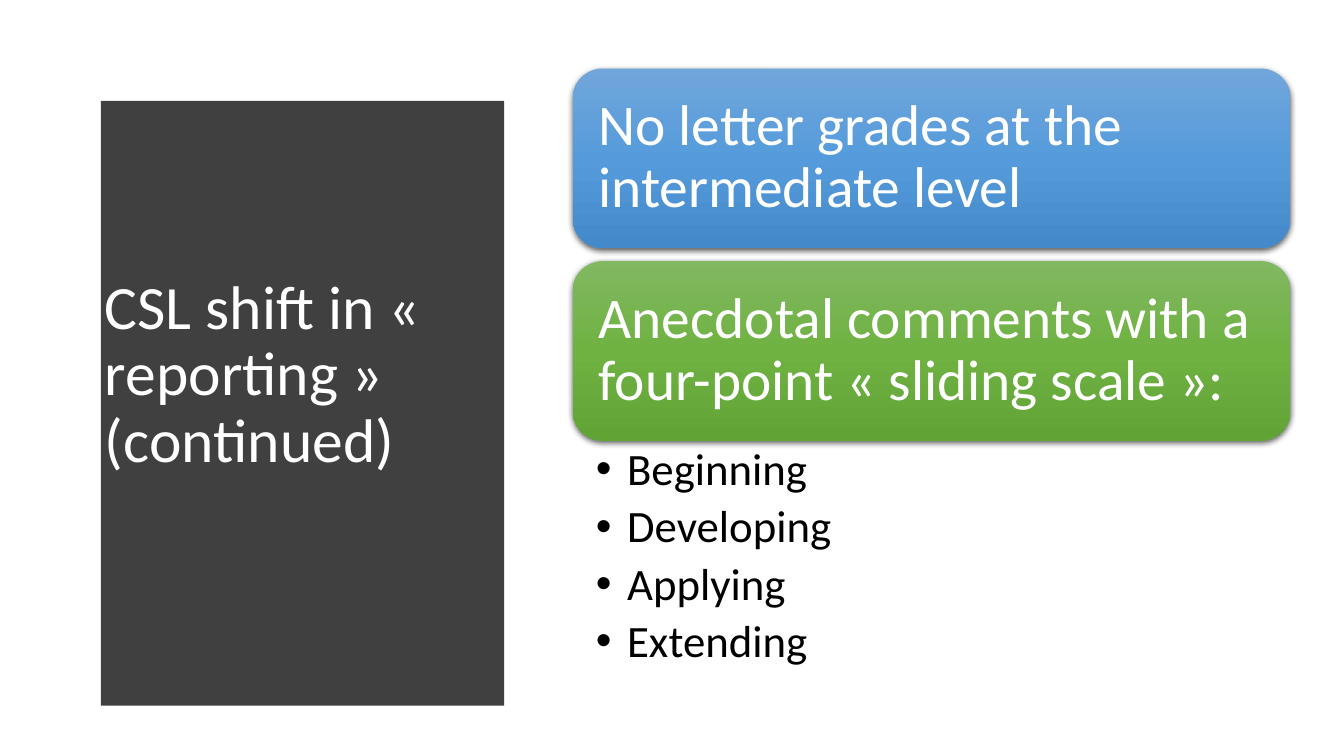
import pptx
import pptx.util
import pptx.dml.color
import pptx.enum.shapes
import pptx.enum.text
import pptx.oxml
import pptx.oxml.ns

Inches = pptx.util.Inches
Pt = pptx.util.Pt
FONT = "Calibri"
COLORS = {
    "panel": "404040",
    "light": "FFFFFF",
    "dark": "000000",
    "blue": ("71A6DB", "559BDB", "448ACA"),
    "green": ("81B861", "6FB242", "62A336"),
}
CARDS = [
    ("No letter grades at the intermediate level", "blue"),
    ("Anecdotal comments with a four-point «\u00a0sliding scale\u00a0»:".replace("\u00a0", " "), "green"),
]
LEVELS = ["Beginning", "Developing", "Applying", "Extending"]


def rgb(name):
    return pptx.dml.color.RGBColor.from_string(COLORS[name])


def xml(body):
    tag, rest = body.split(">", 1)
    return pptx.oxml.parse_xml(f"{tag} {pptx.oxml.ns.nsdecls('a')}>{rest}")


def set_frame(tf, anchor, left, top, right, bottom):
    tf.word_wrap = True
    tf.auto_size = pptx.enum.text.MSO_AUTO_SIZE.NONE
    tf.vertical_anchor = anchor
    tf.margin_left, tf.margin_top = Inches(left), Inches(top)
    tf.margin_right, tf.margin_bottom = Inches(right), Inches(bottom)


def write(p, text, size, color):
    p.alignment = pptx.enum.text.PP_ALIGN.LEFT
    p.line_spacing = 0.9
    r = p.add_run()
    r.text = text
    r.font.name = FONT
    r.font.size = Pt(size)
    r.font.color.rgb = rgb(color)


def add_title_panel(s, left, top, width, height):
    bulge, steps = 0.24, 40
    edge = left + width - bulge
    curve = []
    for i in range(steps + 1):
        t = 2 * i / steps - 1
        curve.append((edge + bulge * (1 - t * t), top + height * i / steps))
    fb = s.shapes.build_freeform(left, top, scale=Inches(1))
    fb.add_line_segments(curve + [(left, top + height)], close=True)
    sp = fb.convert_to_shape()
    sp.shadow.inherit = False
    sp.fill.solid()
    sp.fill.fore_color.rgb = rgb("panel")
    sp.line.fill.background()

    title = s.shapes.title
    title.left, title.top = Inches(left + 0.41), Inches(top + 0.59)
    title.width, title.height = Inches(width - 1.05), Inches(height - 1.2)
    s.shapes._spTree.append(title._element)
    set_frame(title.text_frame, pptx.enum.text.MSO_ANCHOR.MIDDLE, 0.1, 0.05, 0.1, 0.05)
    write(title.text_frame.paragraphs[0], "CSL shift in « reporting » (continued)", 44, "light")


def add_card(s, left, top, width, height, text, color):
    sp = s.shapes.add_shape(pptx.enum.shapes.MSO_SHAPE.ROUNDED_RECTANGLE,
                            Inches(left), Inches(top), Inches(width), Inches(height))
    sp.line.fill.background()
    stops = "".join(f'<a:gs pos="{i * 50000}"><a:srgbClr val="{c}"/></a:gs>'
                    for i, c in enumerate(COLORS[color]))
    spPr = sp._element.spPr
    spPr.insert(2, xml(f'<a:gradFill><a:gsLst>{stops}</a:gsLst>'
                       '<a:lin ang="5400000" scaled="0"/></a:gradFill>'))
    spPr.append(xml(f'<a:effectLst><a:outerShdw blurRad="{Pt(4.5)}" dist="{Pt(1.5)}" '
                    f'dir="5400000" algn="ctr" rotWithShape="0"><a:srgbClr val="{COLORS["dark"]}">'
                    '<a:alpha val="63000"/></a:srgbClr></a:outerShdw></a:effectLst>'))
    set_frame(sp.text_frame, pptx.enum.text.MSO_ANCHOR.MIDDLE, 0.17, 0.17, 0.17, 0.17)
    write(sp.text_frame.paragraphs[0], text, 41, "light")


def add_levels(s, left, top, width, height):
    tb = s.shapes.add_textbox(Inches(left), Inches(top), Inches(width), Inches(height))
    tf = tb.text_frame
    set_frame(tf, pptx.enum.text.MSO_ANCHOR.TOP, 0.23, 0.06, 0.32, 0.06)
    for i, level in enumerate(LEVELS):
        p = tf.add_paragraph() if i else tf.paragraphs[0]
        write(p, level, 32, "dark")
        p.space_after = Pt(6.4)
        pPr = p._p.get_or_add_pPr()
        pPr.set("marL", str(Inches(0.31)))
        pPr.set("indent", str(-Inches(0.31)))
        pPr.append(xml('<a:buFont typeface="Arial"></a:buFont>'))
        pPr.append(xml('<a:buChar char="•"></a:buChar>'))


def add_reporting_list(s, left, top, width, height):
    card, pitch = 1.78, 1.91
    for i, (text, color) in enumerate(CARDS):
        add_card(s, left, top + i * pitch, width, card, text, color)
    used = pitch * (len(CARDS) - 1) + card
    add_levels(s, left, top + used, width, height - used)


def main():
    prs = pptx.Presentation()
    prs.slide_width, prs.slide_height = Inches(13.33), Inches(7.5)
    s = prs.slides.add_slide(prs.slide_layouts[5])
    add_title_panel(s, 0.53, 0.52, 4.79, 6.44)
    add_reporting_list(s, 5.68, 0.68, 7.12, 6.1)
    prs.save("out.pptx")


if __name__ == "__main__":
    main()
